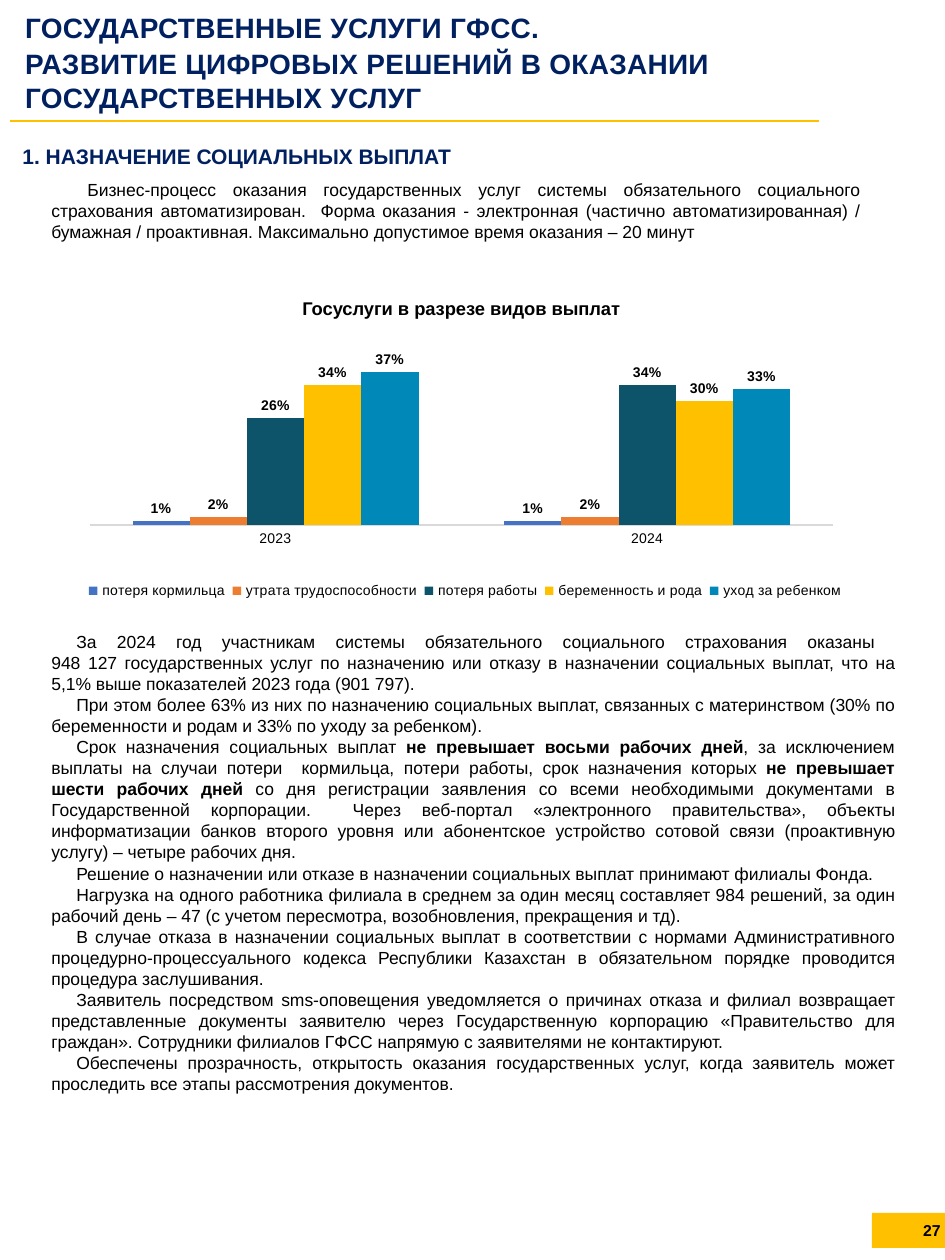
import copy

import lxml.etree
import pptx
import pptx.chart.data
import pptx.dml.color
import pptx.enum.chart
import pptx.enum.shapes
import pptx.enum.text
import pptx.oxml
import pptx.oxml.ns
import pptx.util

SCALE = 914400 / 126
FONT = "Arial"
COLORS = {
    "navy": "002060", "black": "000000", "white": "FFFFFF", "gold": "FFC000",
    "axis": "D9D9D9", "blue": "4472C4", "orange": "ED7D31", "teal": "0D5369", "cyan": "0088B8",
}
ALIGN = pptx.enum.text.PP_ALIGN

YEARS = ["2023", "2024"]
PAYMENTS = [
    ("потеря кормильца", (0.01, 0.01), "blue"),
    ("утрата трудоспособности", (0.02, 0.02), "orange"),
    ("потеря работы", (0.26, 0.34), "teal"),
    ("беременность и рода", (0.34, 0.30), "gold"),
    ("уход за ребенком", (0.37, 0.33), "cyan"),
]
HEADING = [
    "ГОСУДАРСТВЕННЫЕ УСЛУГИ ГФСС.",
    "РАЗВИТИЕ ЦИФРОВЫХ РЕШЕНИЙ В ОКАЗАНИИ ГОСУДАРСТВЕННЫХ УСЛУГ",
]
INTRO = (
    "Бизнес-процесс оказания государственных услуг системы обязательного социального "
    "страхования автоматизирован.  Форма оказания - электронная (частично автоматизированная) / "
    "бумажная / проактивная. Максимально допустимое время оказания – 20 минут"
)
DETAILS = [
    "За 2024 год участникам системы обязательного социального страхования оказаны \n"
    "948 127 государственных услуг по назначению или отказу в назначении социальных выплат, "
    "что на 5,1% выше показателей 2023 года (901 797).",
    "При этом более 63% из них по назначению социальных выплат, связанных с материнством "
    "(30% по беременности и родам и 33% по уходу за ребенком).",
    "Срок назначения социальных выплат **не превышает восьми рабочих дней**, за исключением "
    "выплаты на случаи потери  кормильца, потери работы, срок назначения которых "
    "**не превышает шести рабочих дней** со дня регистрации заявления со всеми необходимыми "
    "документами в Государственной корпорации.  Через веб-портал «электронного правительства», "
    "объекты информатизации банков второго уровня или абонентское устройство сотовой связи "
    "(проактивную услугу) – четыре рабочих дня.",
    "Решение о назначении или отказе в назначении социальных выплат принимают филиалы Фонда.",
    "Нагрузка на одного работника филиала в среднем за один месяц составляет 984 решений, "
    "за один рабочий день – 47 (с учетом пересмотра, возобновления, прекращения и тд).",
    "В случае отказа в назначении социальных выплат в соответствии с нормами Административного "
    "процедурно-процессуального кодекса Республики Казахстан в обязательном порядке проводится "
    "процедура заслушивания.",
    "Заявитель посредством sms-оповещения уведомляется о причинах отказа и филиал возвращает "
    "представленные документы заявителю через Государственную корпорацию «Правительство для "
    "граждан». Сотрудники филиалов ГФСС напрямую с заявителями не контактируют.",
    "Обеспечены прозрачность, открытость оказания государственных услуг, когда заявитель может "
    "проследить все этапы рассмотрения документов.",
]


def px(length):
    return round(length * SCALE)


def color(name):
    return pptx.dml.color.RGBColor.from_string(COLORS[name])


def set_font(font, size, bold=False, name="black"):
    font.name = FONT
    font.size = pptx.util.Pt(size)
    font.bold = bold
    font.color.rgb = color(name)


def write(frame, paragraphs, size=10, bold=False, name="black", align=ALIGN.LEFT,
          margin=0, indent=0, before=0, spacing=0):
    """Fill a text frame; ** toggles bold and a newline is a line break."""
    frame.word_wrap = True
    for index, text in enumerate(paragraphs):
        para = frame.paragraphs[0] if index == 0 else frame.add_paragraph()
        para.alignment = align
        para.space_before = pptx.util.Pt(before)
        properties = para._p.get_or_add_pPr()
        properties.set("marL", str(px(margin)))
        properties.set("indent", str(px(indent)))
        for part, piece in enumerate(text.split("**")):
            for line_number, line in enumerate(piece.split("\n")):
                if line_number:
                    para.add_line_break()
                    para._p[-1].append(copy.deepcopy(span._r.rPr))
                span = para.add_run()
                span.text = line
                set_font(span.font, size, bold or part % 2 == 1, name)
                if spacing:
                    span._r.rPr.set("spc", str(spacing))


def add_text(page, box, paragraphs, anchor=pptx.enum.text.MSO_ANCHOR.TOP, **style):
    frame = page.shapes.add_textbox(*map(px, box)).text_frame
    frame.vertical_anchor = anchor
    write(frame, paragraphs, **style)


def add_block(page, box, name):
    block = page.shapes.add_shape(pptx.enum.shapes.MSO_SHAPE.RECTANGLE, *map(px, box))
    block.shadow.inherit = False
    block.fill.solid()
    block.fill.fore_color.rgb = color(name)
    block.line.fill.background()
    return block


def add_heading(page, box):
    left, top, width, height = box
    frame = add_block(page, box, "white").text_frame
    frame.margin_left = frame.margin_right = frame.margin_bottom = 0
    frame.margin_top = px(2)
    frame.vertical_anchor = pptx.enum.text.MSO_ANCHOR.TOP
    write(frame, HEADING, size=16, bold=True, name="navy", margin=2, before=1.3, spacing=20)
    rule = page.shapes.add_connector(
        pptx.enum.shapes.MSO_CONNECTOR.STRAIGHT,
        px(left - 13), px(top + 112), px(left + 796), px(top + 112))
    rule.line.color.rgb = color("gold")
    rule.line.width = pptx.util.Pt(1.5)
    lxml.etree.SubElement(rule._element.spPr, pptx.oxml.ns.qn("a:effectLst"))


def set_layout(parent, x, y, width, height, inner=False):
    """Fix the place of a plot area or legend, in fractions of the chart."""
    for old in parent.findall(pptx.oxml.ns.qn("c:layout")):
        parent.remove(old)
    target = '<c:layoutTarget val="inner"/>' if inner else ""
    layout = pptx.oxml.parse_xml(
        f'<c:layout {pptx.oxml.ns.nsdecls("c")}><c:manualLayout>{target}'
        '<c:xMode val="edge"/><c:yMode val="edge"/>'
        f'<c:x val="{x}"/><c:y val="{y}"/><c:w val="{width}"/><c:h val="{height}"/>'
        '</c:manualLayout></c:layout>')
    parent.insert(0 if inner else 1, layout)


def add_payment_chart(page, box):
    left, top, width, height = box
    add_text(page, (left - 14, top - 49, 819, 35), ["Госуслуги в разрезе видов выплат"],
             size=10.5, bold=True, align=ALIGN.CENTER)
    data = pptx.chart.data.CategoryChartData(number_format="0%")
    data.categories = YEARS
    for label, values, _ in PAYMENTS:
        data.add_series(label, values)
    chart = page.shapes.add_chart(
        pptx.enum.chart.XL_CHART_TYPE.COLUMN_CLUSTERED, *map(px, box), data).chart
    set_font(chart.font, 8)
    chart.has_title = False
    chart.has_legend = True
    chart.legend.position = pptx.enum.chart.XL_LEGEND_POSITION.BOTTOM
    chart.legend.include_in_layout = False
    set_font(chart.legend.font, 8)
    set_layout(chart.legend._element, 0.02, 0.83, 0.97, 0.1)
    set_layout(chart._chartSpace.chart.plotArea, 0.03, 0.07, 0.94, 0.58, inner=True)

    years = chart.category_axis
    years.major_tick_mark = pptx.enum.chart.XL_TICK_MARK.NONE
    years.format.line.color.rgb = color("axis")
    years.format.line.width = pptx.util.Pt(0.75)
    set_font(years.tick_labels.font, 8)
    shares = chart.value_axis
    shares.minimum_scale, shares.maximum_scale = 0, 0.4
    shares.has_major_gridlines = False
    shares.visible = False

    plot = chart.plots[0]
    plot.gap_width, plot.overlap, plot.vary_by_categories = 150, 0, False
    for series, (_, _, name) in zip(plot.series, PAYMENTS):
        series.format.fill.solid()
        series.format.fill.fore_color.rgb = color(name)
        labels = series.data_labels
        labels.show_value = True
        labels.position = pptx.enum.chart.XL_LABEL_POSITION.OUTSIDE_END
        set_font(labels.font, 8, bold=True)


def add_page_number(page, box):
    left, top, width, height = box
    add_block(page, box, "gold")
    add_text(page, (left - 132, top - 16, 213, 67), ["27"], size=9, bold=True,
             align=ALIGN.RIGHT, anchor=pptx.enum.text.MSO_ANCHOR.MIDDLE)


def main():
    deck = pptx.Presentation()
    deck.slide_width, deck.slide_height = px(945), px(1260)
    page = deck.slides.add_slide(deck.slide_layouts[6])
    add_heading(page, (23, 9, 912, 106))
    add_text(page, (10, 137, 912, 38), ["1. НАЗНАЧЕНИЕ СОЦИАЛЬНЫХ ВЫПЛАТ"],
             size=12, bold=True, name="navy")
    add_text(page, (39, 173, 833, 77), [INTRO], align=ALIGN.JUSTIFY, indent=36)
    add_payment_chart(page, (66, 340, 791, 285))
    add_text(page, (39, 625, 868, 479), DETAILS, align=ALIGN.JUSTIFY, indent=25)
    add_page_number(page, (872, 1213, 74, 35))
    deck.save("out.pptx")


if __name__ == "__main__":
    main()
